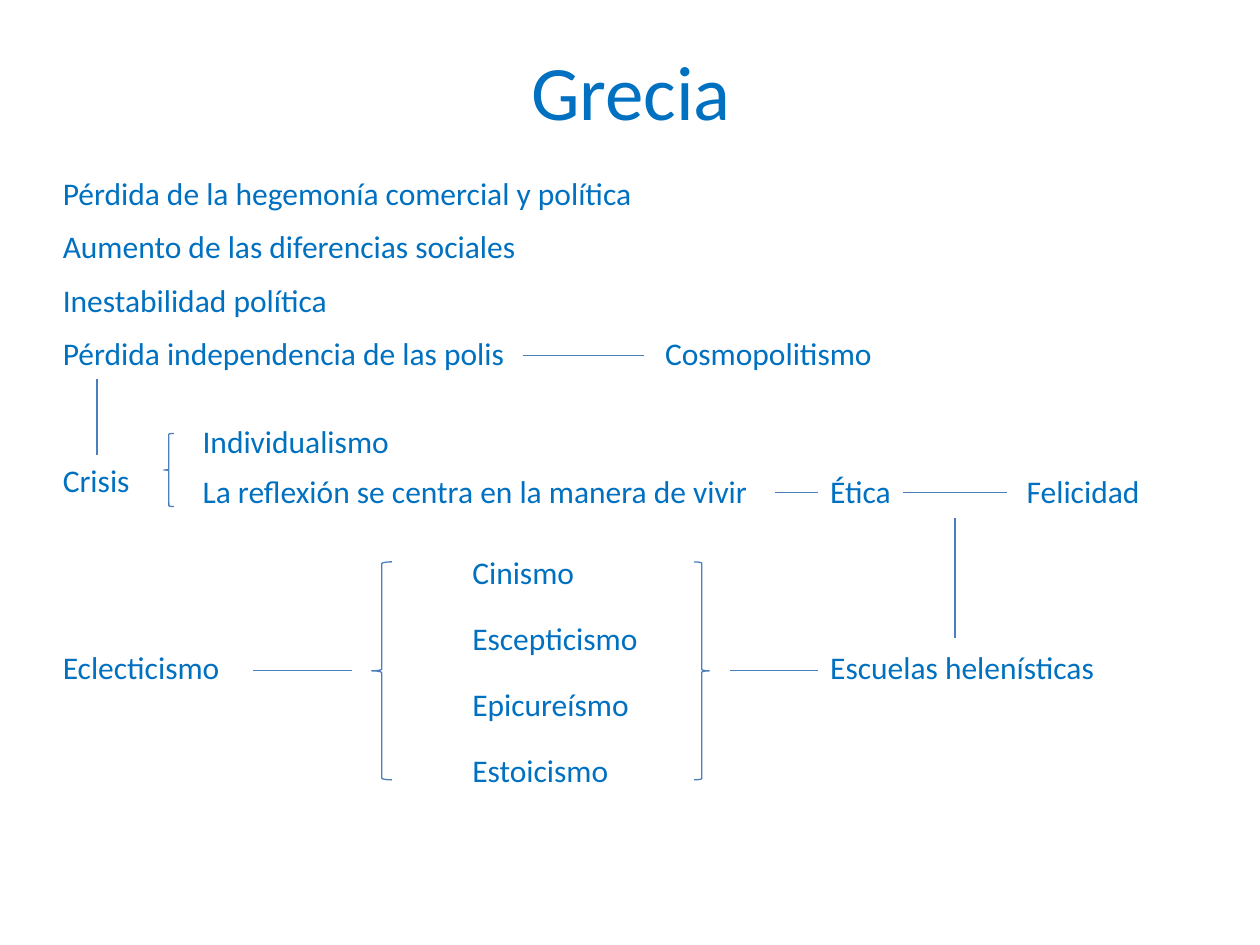
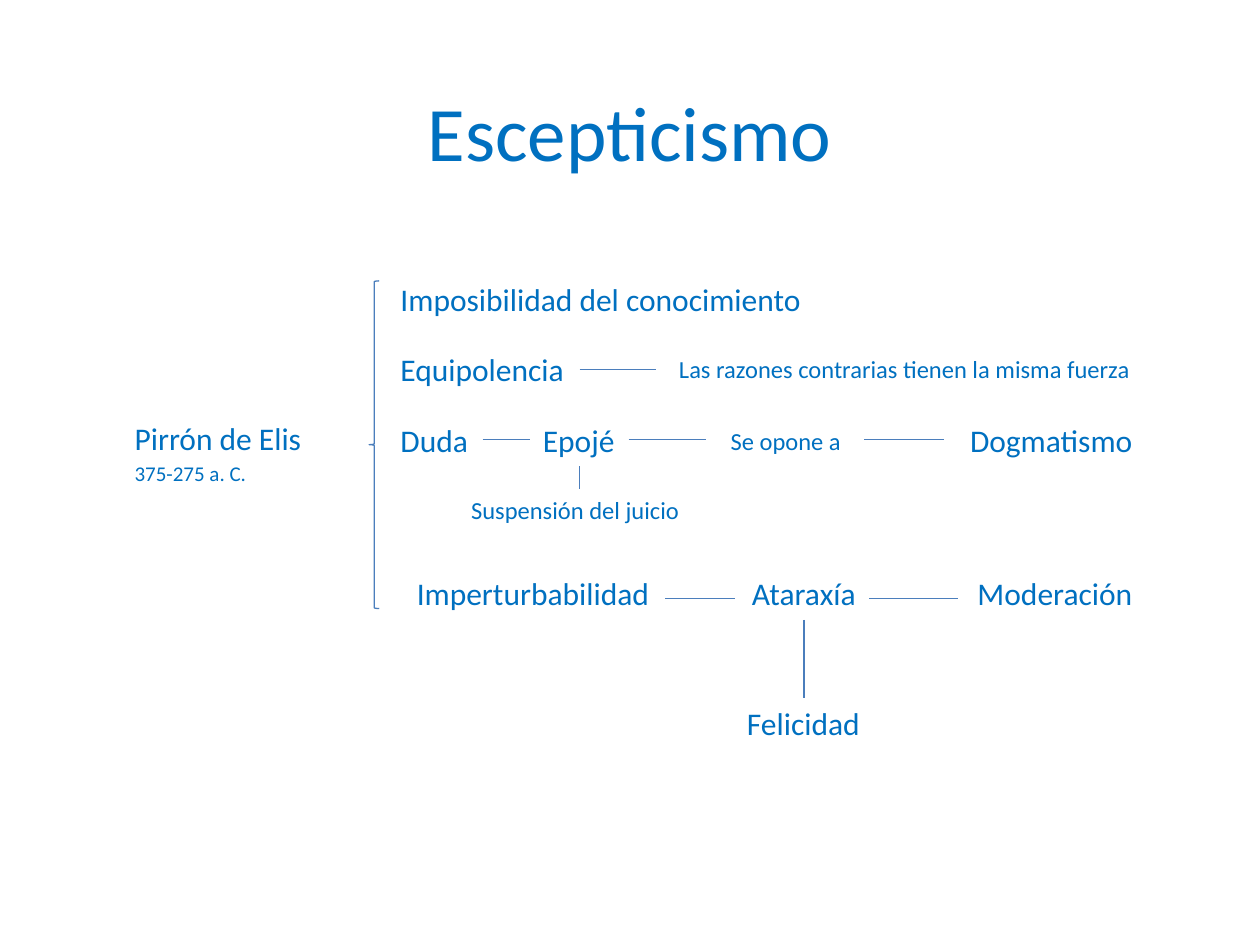
from dataclasses import dataclass

from pptx import Presentation
from pptx.dml.color import RGBColor
from pptx.enum.shapes import MSO_CONNECTOR, MSO_SHAPE
from pptx.enum.text import MSO_ANCHOR, MSO_AUTO_SIZE, PP_ALIGN
from pptx.oxml.ns import qn
from pptx.util import Inches, Pt

STRAIGHT = MSO_CONNECTOR.STRAIGHT
LEFT_BRACE, RIGHT_BRACE = MSO_SHAPE.LEFT_BRACE, MSO_SHAPE.RIGHT_BRACE
MIDDLE = MSO_ANCHOR.MIDDLE
GROW = MSO_AUTO_SIZE.SHAPE_TO_FIT_TEXT
LEFT, CENTER = PP_ALIGN.LEFT, PP_ALIGN.CENTER
TITLE_ONLY = 5


@dataclass(frozen=True)
class Theme:
    font: str = "Calibri"
    text: RGBColor = RGBColor(0x00, 0x70, 0xC0)
    line: RGBColor = RGBColor(0x4B, 0x7E, 0xBC)
    line_width: float = 0.75
    title: int = 44
    body: int = 18
    note: int = 14
    date: int = 12


THEME = Theme()
LABEL_HEIGHTS = {THEME.body: 0.4, THEME.note: 0.34, THEME.date: 0.3}


def apply(obj, values):
    for name, value in values.items():
        setattr(obj, name, value)


def write(tf, text, size, align):
    p = tf.paragraphs[0]
    p.alignment = align
    r = p.add_run()
    r.text = text
    apply(r.font, {"name": THEME.font, "size": Pt(size)})
    r.font.color.rgb = THEME.text


def style_line(line):
    line.color.rgb = THEME.line
    line.width = Pt(THEME.line_width)


@dataclass
class Region:
    s: object
    left: float
    top: float

    def at(self, x, y):
        return Inches(self.left + x), Inches(self.top + y)

    def label(self, text, x, y, width, size=THEME.body):
        sp = self.s.shapes.add_textbox(
            *self.at(x, y), Inches(width), Inches(LABEL_HEIGHTS[size]))
        apply(sp.text_frame, {"word_wrap": False, "auto_size": GROW})
        write(sp.text_frame, text, size, LEFT)

    def link(self, x1, y1, x2, y2):
        cn = self.s.shapes.add_connector(STRAIGHT, *self.at(x1, y1), *self.at(x2, y2))
        style_line(cn.line)
        sp_pr = cn._element.spPr
        sp_pr.append(sp_pr.makeelement(qn("a:effectLst"), {}))

    def links_across(self, y, spans):
        for start, end in spans:
            self.link(start, y, end, y)

    def brace(self, kind, x, y, width, height):
        sp = self.s.shapes.add_shape(
            kind, *self.at(x, y), Inches(width), Inches(height))
        sp.shadow.inherit = False
        sp.fill.background()
        style_line(sp.line)


def titled_slide(prs, text, left, top, width, height):
    s = prs.slides.add_slide(prs.slide_layouts[TITLE_ONLY])
    title = s.shapes.title
    apply(title, {"left": Inches(left), "top": Inches(top),
                  "width": Inches(width), "height": Inches(height)})
    title.text_frame.vertical_anchor = MIDDLE
    write(title.text_frame, text, THEME.title, CENTER)
    return s


def causes(box):
    rows = [("Pérdida de la hegemonía comercial y política", 4.77),
            ("Aumento de las diferencias sociales", 3.84),
            ("Inestabilidad política", 2.32),
            ("Pérdida independencia de las polis", 3.75)]
    pitch = 0.424
    for i, (text, width) in enumerate(rows):
        box.label(text, 0, i * pitch, width)
    box.links_across(1.49, [(3.75, 4.71)])
    box.label("Cosmopolitismo", 4.78, 3 * pitch, 1.86)


def crisis(box):
    box.link(0.37, 0, 0.37, 0.6)
    box.label("Crisis", 0, 0.6, 0.74)
    box.brace(LEFT_BRACE, 0.9, 0.43, 0.08, 0.58)
    box.label("Individualismo", 1.11, 0.29, 1.7)
    for text, x, width in [("La reflexión se centra en la manera de vivir", 1.11, 4.64),
                           ("Ética", 6.09, 0.69),
                           ("Felicidad", 7.65, 1.11)]:
        box.label(text, x, 0.69, width)
    box.links_across(0.9, [(5.75, 6.09), (6.77, 7.59)])


def schools(box):
    box.link(7.18, 0, 7.18, 0.95)
    box.label("Escuelas helenísticas", 6.09, 0.98, 2.32)
    box.label("Eclecticismo", 0, 0.98, 1.45)
    names = [("Cinismo", 1.02), ("Escepticismo", 1.53),
             ("Epicureísmo", 1.46), ("Estoicismo", 1.29)]
    for i, (text, width) in enumerate(names):
        box.label(text, 3.25, 0.23 + i * 0.524, width)
    box.brace(LEFT_BRACE, 2.55, 0.35, 0.16, 1.73)
    box.brace(RIGHT_BRACE, 5.11, 0.35, 0.12, 1.73)
    box.links_across(1.21, [(1.61, 2.39), (5.39, 6.09)])


def philosopher(box):
    box.label("Pirrón de Elis", 0, 0, 1.54)
    box.label("375-275 a. C.", 0, 0.33, 1.1, THEME.date)


def theses(box):
    box.brace(LEFT_BRACE, 0, 0.06, 0.08, 2.6)
    pitch = 0.56
    for i, (text, width) in enumerate([("Imposibilidad del conocimiento", 3.42),
                                       ("Equipolencia", 1.51),
                                       ("Duda", 0.75)]):
        box.label(text, 0.15, i * pitch, width)
    box.links_across(0.76, [(1.67, 2.28)])
    box.label("Las razones contrarias tienen la misma fuerza", 2.36, 0.59, 3.81, THEME.note)
    box.label("Epojé", 1.28, 2 * pitch, 0.78)
    box.label("Se opone a", 2.77, 1.16, 1.08, THEME.note)
    box.label("Dogmatismo", 4.67, 2 * pitch, 1.51)
    box.links_across(1.32, [(0.9, 1.28), (2.06, 2.67), (3.93, 4.56)])
    box.link(1.67, 1.53, 1.67, 1.71)
    box.label("Suspensión del juicio", 0.71, 1.71, 1.91, THEME.note)


def ataraxia(box):
    for text, x, width in [("Imperturbabilidad", 0, 2.07),
                           ("Ataraxía", 2.66, 1.03),
                           ("Moderación", 4.45, 1.44)]:
        box.label(text, x, 0, width)
    box.links_across(0.24, [(2.07, 2.62), (3.69, 4.39)])
    box.link(3.17, 0.41, 3.17, 1.03)
    box.label("Felicidad", 2.62, 1.03, 1.11)


def greece_slide(prs):
    s = titled_slide(prs, "Grecia", 0.75, 0.29, 8.52, 0.85)
    causes(Region(s, 0.4, 1.33))
    crisis(Region(s, 0.4, 3.01))
    schools(Region(s, 0.4, 4.11))


def scepticism_slide(prs):
    s = titled_slide(prs, "Escepticismo", 2.99, 0.6, 4.02, 0.87)
    philosopher(Region(s, 0.97, 3.28))
    theses(Region(s, 2.93, 2.17))
    ataraxia(Region(s, 3.21, 4.51))


def main():
    prs = Presentation()
    apply(prs, {"slide_width": Inches(10), "slide_height": Inches(7.5)})
    greece_slide(prs)
    scepticism_slide(prs)
    prs.save("out.pptx")


if __name__ == "__main__":
    main()
